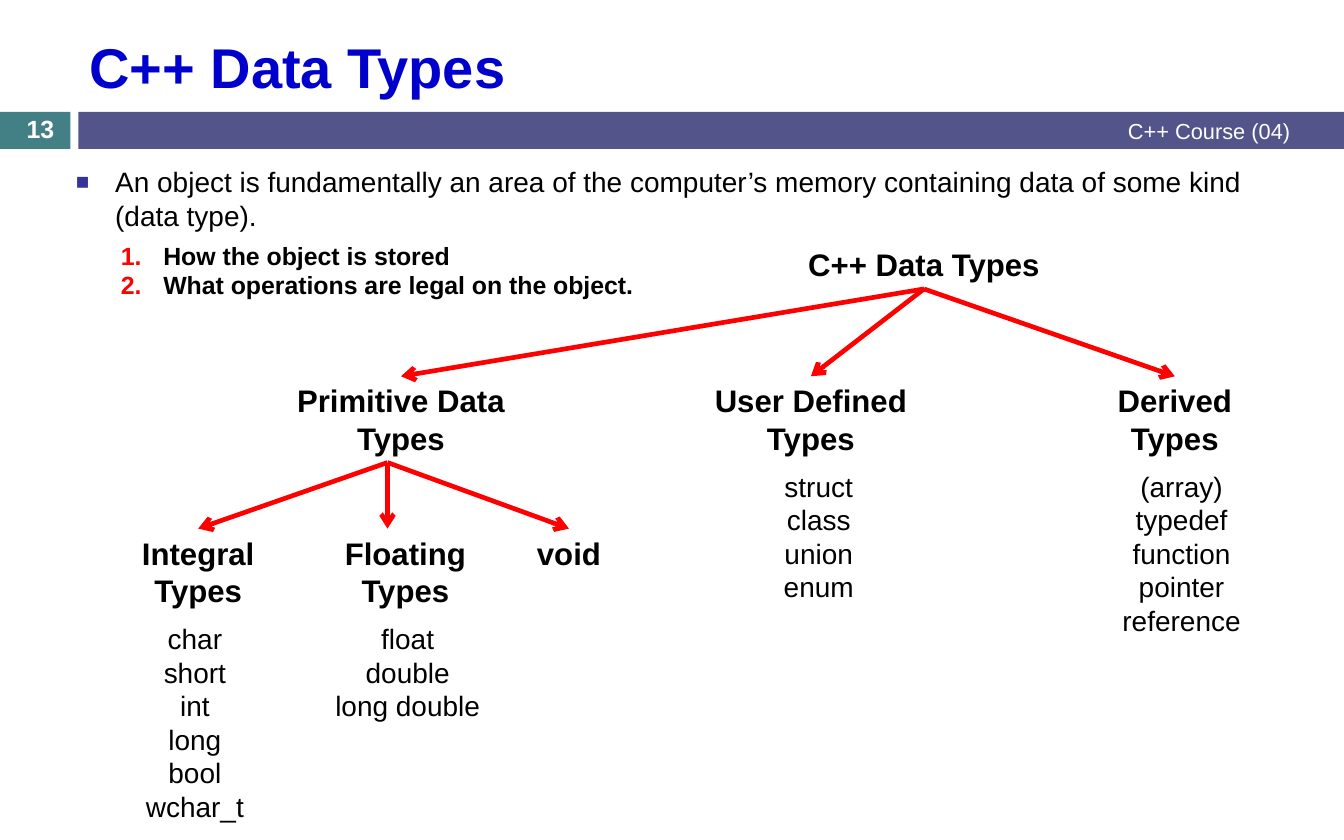
from dataclasses import dataclass

from lxml import etree
from pptx import Presentation
from pptx.dml.color import RGBColor
from pptx.enum.shapes import MSO_CONNECTOR, MSO_SHAPE
from pptx.enum.text import MSO_ANCHOR, MSO_AUTO_SIZE, PP_ALIGN
from pptx.oxml.ns import qn
from pptx.util import Inches, Pt

LEFT, CENTER, RIGHT = PP_ALIGN.LEFT, PP_ALIGN.CENTER, PP_ALIGN.RIGHT
TOP, MIDDLE = MSO_ANCHOR.TOP, MSO_ANCHOR.MIDDLE
FIT_TEXT = MSO_AUTO_SIZE.SHAPE_TO_FIT_TEXT
RECTANGLE, STRAIGHT = MSO_SHAPE.RECTANGLE, MSO_CONNECTOR.STRAIGHT
TOP_SIDE, BOTTOM_SIDE = 0, 2

# The slide is a grid of 12 columns by 7.5 rows, each cell one inch square.
COLUMNS, ROWS = 12, 7.5
BAND_ROW, BAND_HEIGHT = 1, 0.33
KIND_ROW, PRIMITIVE_ROW = 3.36, 4.72
PADDING = 0.1


@dataclass(frozen=True)
class Theme:
    font: str = "Arial"
    ink: str = "000000"
    white: str = "FFFFFF"
    title: str = "0000CC"
    teal: str = "438086"
    indigo: str = "53548A"
    bullet: str = "333399"
    red: str = "FF0000"
    title_size: int = 36
    heading_size: int = 20
    text_size: int = 18
    detail_size: int = 16
    footer_size: int = 14
    arrow_width: int = 3


THEME = Theme()


@dataclass(frozen=True)
class Box:
    column: float
    row: float
    width: float
    height: float

    @property
    def emu(self) -> tuple:
        return tuple(Inches(v) for v in (self.column, self.row, self.width, self.height))


@dataclass(frozen=True)
class Style:
    size: int
    color: str = THEME.ink
    bold: bool = False


@dataclass(frozen=True)
class TypeNode:
    """A heading centred on a column, with its member types below."""
    heading: str
    center: float
    row: float
    width: float
    lines: int = 2
    members: tuple = ()
    members_center: float = 0
    members_width: float = 0


HEADING = Style(THEME.heading_size, bold=True)
MEMBER = Style(THEME.text_size)
DETAIL = Style(THEME.detail_size, bold=True)

ROOT = TypeNode("C++ Data Types", 8.25, 2.14, 2.58, 1)
PRIMITIVE = TypeNode("Primitive Data Types", 3.58, KIND_ROW, 2.58)
USER_DEFINED = TypeNode("User Defined Types", 7.24, KIND_ROW, 2.58, 2,
                        ("struct", "class", "union", "enum"), 7.31, 1.67)
DERIVED = TypeNode("Derived Types", 10.49, KIND_ROW, 1.96, 2,
                   ("(array)", "typedef", "function", "pointer", "reference"), 10.55, 1.33)
INTEGRAL = TypeNode("Integral Types", 1.77, PRIMITIVE_ROW, 1.86, 2,
                    ("char", "short", "int", "long", "bool", "wchar_t"), 1.74, 1.08)
FLOATING = TypeNode("Floating Types", 3.62, PRIMITIVE_ROW, 1.86, 2,
                    ("float", "double", "long double"), 3.64, 1.67)
VOID = TypeNode("void", 5.08, PRIMITIVE_ROW, 1.08, 1)
PRIMITIVE_FORK = (3.46, 4.13)


def add_band(slide, box: Box, color: str) -> None:
    band = slide.shapes.add_shape(RECTANGLE, *box.emu)
    band.shadow.inherit = False
    band.fill.solid()
    band.fill.fore_color.rgb = RGBColor.from_string(color)
    band.line.fill.background()


def write(paragraph, words: str, style: Style, align=LEFT) -> None:
    paragraph.alignment = align
    run = paragraph.add_run()
    run.text = words
    run.font.name = THEME.font
    run.font.size = Pt(style.size)
    run.font.bold = style.bold
    run.font.color.rgb = RGBColor.from_string(style.color)


def add_text(slide, box: Box, lines: tuple, style: Style, align=CENTER,
             anchor=MIDDLE, grow: bool = False):
    label = slide.shapes.add_textbox(*box.emu)
    frame = label.text_frame
    frame.word_wrap = True
    frame.vertical_anchor = anchor
    if grow:
        frame.auto_size = FIT_TEXT
    for index, words in enumerate(lines):
        paragraph = frame.add_paragraph() if index else frame.paragraphs[0]
        write(paragraph, words, style, align)
    return label


def add_node(slide, node: TypeNode):
    """Draw the heading and members; return the heading's shape."""
    def block(center: float, row: float, width: float, lines: tuple, height: float, style: Style):
        return add_text(slide, Box(center - width / 2, row, width, height), lines, style,
                        anchor=TOP, grow=True)

    height = PADDING + 0.34 * node.lines
    if node.members:
        block(node.members_center, node.row + height, node.members_width,
              node.members, PADDING + 0.3 * len(node.members), MEMBER)
    return block(node.center, node.row, node.width, (node.heading,), height, HEADING)


def add_arrow(slide, start: tuple, end: tuple):
    points = [Inches(v) for v in (*start, *end)]
    arrow = slide.shapes.add_connector(STRAIGHT, *points)
    arrow.line.color.rgb = RGBColor.from_string(THEME.red)
    arrow.line.width = Pt(THEME.arrow_width)
    properties = arrow._element.spPr
    etree.SubElement(properties.find(qn("a:ln")), qn("a:tailEnd"), type="arrow")
    etree.SubElement(properties, qn("a:effectLst"))
    return arrow


def set_bullet(paragraph, margin: float, hanging: float, color: str, number: bool) -> None:
    properties = paragraph._p.get_or_add_pPr()
    properties.set("marL", str(Inches(margin)))
    properties.set("indent", str(-Inches(hanging)))
    bullet_color = etree.SubElement(properties, qn("a:buClr"))
    etree.SubElement(bullet_color, qn("a:srgbClr"), val=color)
    if number:
        etree.SubElement(properties, qn("a:buAutoNum"), type="arabicPeriod")
    else:
        etree.SubElement(properties, qn("a:buSzPct"), val="80000")
        etree.SubElement(properties, qn("a:buFont"), typeface=THEME.font)
        etree.SubElement(properties, qn("a:buChar"), char="■")


def add_definition(slide) -> None:
    definition = add_text(
        slide, Box(0.58, 1.42, 10.79, 1.67),
        ("An object is fundamentally an area of the computer’s memory "
         "containing data of some kind (data type).",),
        MEMBER, LEFT, TOP)
    frame = definition.text_frame
    frame.paragraphs[0].space_before = Pt(7)
    set_bullet(frame.paragraphs[0], 0.35, 0.35, THEME.bullet, number=False)
    details = (("How the object is stored", 5.5),
               ("What operations are legal on the object.", 0))
    for words, gap in details:
        paragraph = frame.add_paragraph()
        paragraph.level = 1
        paragraph.space_before = Pt(gap)
        write(paragraph, words, DETAIL)
        set_bullet(paragraph, 0.78, 0.38, THEME.red, number=True)


def main() -> None:
    deck = Presentation()
    deck.slide_width, deck.slide_height = Inches(COLUMNS), Inches(ROWS)
    slide = deck.slides.add_slide(deck.slide_layouts[6])

    add_band(slide, Box(0, BAND_ROW, 0.63, BAND_HEIGHT), THEME.teal)
    add_band(slide, Box(0.7, BAND_ROW, COLUMNS - 0.7, BAND_HEIGHT), THEME.indigo)
    add_definition(slide)
    add_text(slide, Box(0.7, 0.19, 10.91, 0.8), ("C++ Data Types",),
             Style(THEME.title_size, THEME.title, True), LEFT)
    add_text(slide, Box(6.17, BAND_ROW, 5.45, BAND_HEIGHT), ("C++ Course (04)",),
             Style(THEME.footer_size, THEME.white), RIGHT)
    add_text(slide, Box(0, BAND_ROW, 0.72, 0.3), ("13",),
             Style(THEME.detail_size, THEME.white, True))

    root = add_node(slide, ROOT)
    for kind in (DERIVED, USER_DEFINED, PRIMITIVE):
        heading = add_node(slide, kind)
        arrow = add_arrow(slide, (ROOT.center, 2.58), (kind.center, kind.row))
        arrow.begin_connect(root, BOTTOM_SIDE)
        arrow.end_connect(heading, TOP_SIDE)
    for primitive in (INTEGRAL, VOID):
        heading = add_node(slide, primitive)
        arrow = add_arrow(slide, PRIMITIVE_FORK, (primitive.center, primitive.row))
        arrow.end_connect(heading, TOP_SIDE)
    add_node(slide, FLOATING)
    add_arrow(slide, PRIMITIVE_FORK, (PRIMITIVE_FORK[0], PRIMITIVE_ROW))

    deck.save("out.pptx")


if __name__ == "__main__":
    main()
